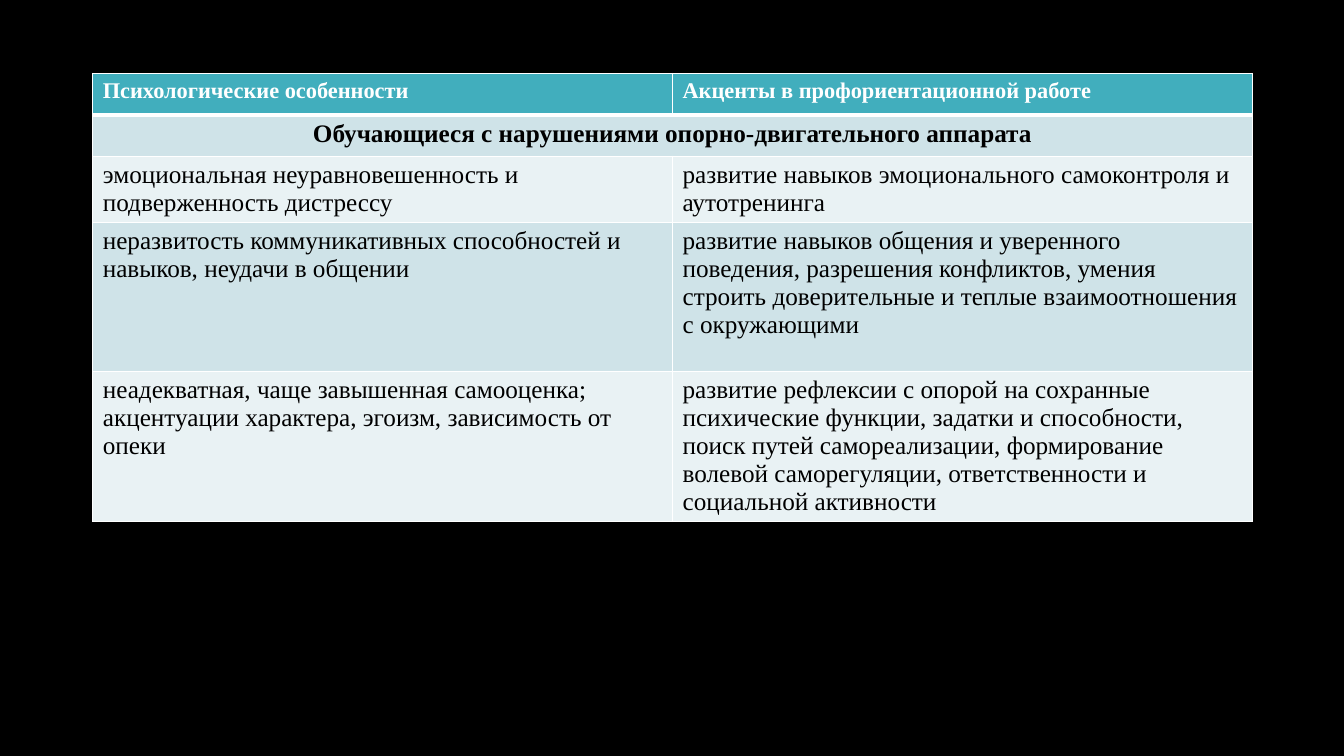
from lxml import etree
from pptx import Presentation
from pptx.dml.color import RGBColor
from pptx.enum.text import PP_ALIGN
from pptx.oxml.ns import qn
from pptx.util import Inches, Pt

BLACK = RGBColor(0x00, 0x00, 0x00)
WHITE = RGBColor(0xFF, 0xFF, 0xFF)
TEAL = RGBColor(0x41, 0xAE, 0xBD)
DARK_BAND = RGBColor(0xCF, 0xE3, 0xE8)
LIGHT_BAND = RGBColor(0xE9, 0xF2, 0xF4)

ROWS = [
    ("Психологические особенности", "Акценты в профориентационной работе"),
    ("Обучающиеся с нарушениями опорно-двигательного аппарата", ""),
    ("эмоциональная неуравновешенность и подверженность дистрессу",
     "развитие навыков эмоционального самоконтроля и аутотренинга"),
    ("неразвитость коммуникативных способностей и навыков, неудачи в общении",
     "развитие навыков общения и уверенного поведения, разрешения конфликтов, "
     "умения строить доверительные и теплые взаимоотношения с окружающими"),
    ("неадекватная, чаще завышенная самооценка; акцентуации характера, эгоизм, "
     "зависимость от опеки",
     "развитие рефлексии с опорой на сохранные психические функции, задатки и "
     "способности, поиск путей самореализации, формирование волевой "
     "саморегуляции, ответственности и социальной активности"),
]
ROW_HEIGHTS = [0.41, 0.41, 0.65, 1.48, 1.49]
ROW_ALIGNMENTS = [PP_ALIGN.JUSTIFY, PP_ALIGN.CENTER] + [PP_ALIGN.LEFT] * 3


def add_borders(cell, row_index):
    """Draw white cell edges, thicker between the header and the body."""
    properties = cell._tc.get_or_add_tcPr()
    widths = {"L": 1, "R": 1,
              "T": 3 if row_index == 1 else 1,
              "B": 3 if row_index == 0 else 1}
    for side, width in widths.items():
        line = etree.SubElement(properties, qn(f"a:ln{side}"), w=str(Pt(width)))
        fill = etree.SubElement(line, qn("a:solidFill"))
        etree.SubElement(fill, qn("a:srgbClr"), val=str(WHITE))


# Slide with a black background
presentation = Presentation()
presentation.slide_width = Inches(13.33)
presentation.slide_height = Inches(7.5)
slide = presentation.slides.add_slide(presentation.slide_layouts[6])
slide.background.fill.solid()
slide.background.fill.fore_color.rgb = BLACK

# Table grid
table = slide.shapes.add_table(
    len(ROWS), 2, Inches(0.92), Inches(0.73), Inches(11.5), Inches(sum(ROW_HEIGHTS))
).table
table.horz_banding = False
for row, height in zip(table.rows, ROW_HEIGHTS):
    row.height = Inches(height)
table.cell(1, 0).merge(table.cell(1, 1))

# Cell text, borders and banded fills
for row_index, texts in enumerate(ROWS):
    is_header = row_index == 0
    band = DARK_BAND if row_index % 2 else LIGHT_BAND
    for column_index, text in enumerate(texts):
        cell = table.cell(row_index, column_index)
        add_borders(cell, row_index)
        cell.fill.solid()
        cell.fill.fore_color.rgb = TEAL if is_header else band
        if cell.is_spanned:
            continue
        cell.text_frame.text = text
        paragraph = cell.text_frame.paragraphs[0]
        paragraph.alignment = ROW_ALIGNMENTS[row_index]
        font = paragraph.runs[0].font
        font.name = "Times New Roman"
        font.size = Pt(16 if is_header else 18)
        font.bold = row_index < 2
        font.color.rgb = WHITE if is_header else BLACK

presentation.save("out.pptx")
